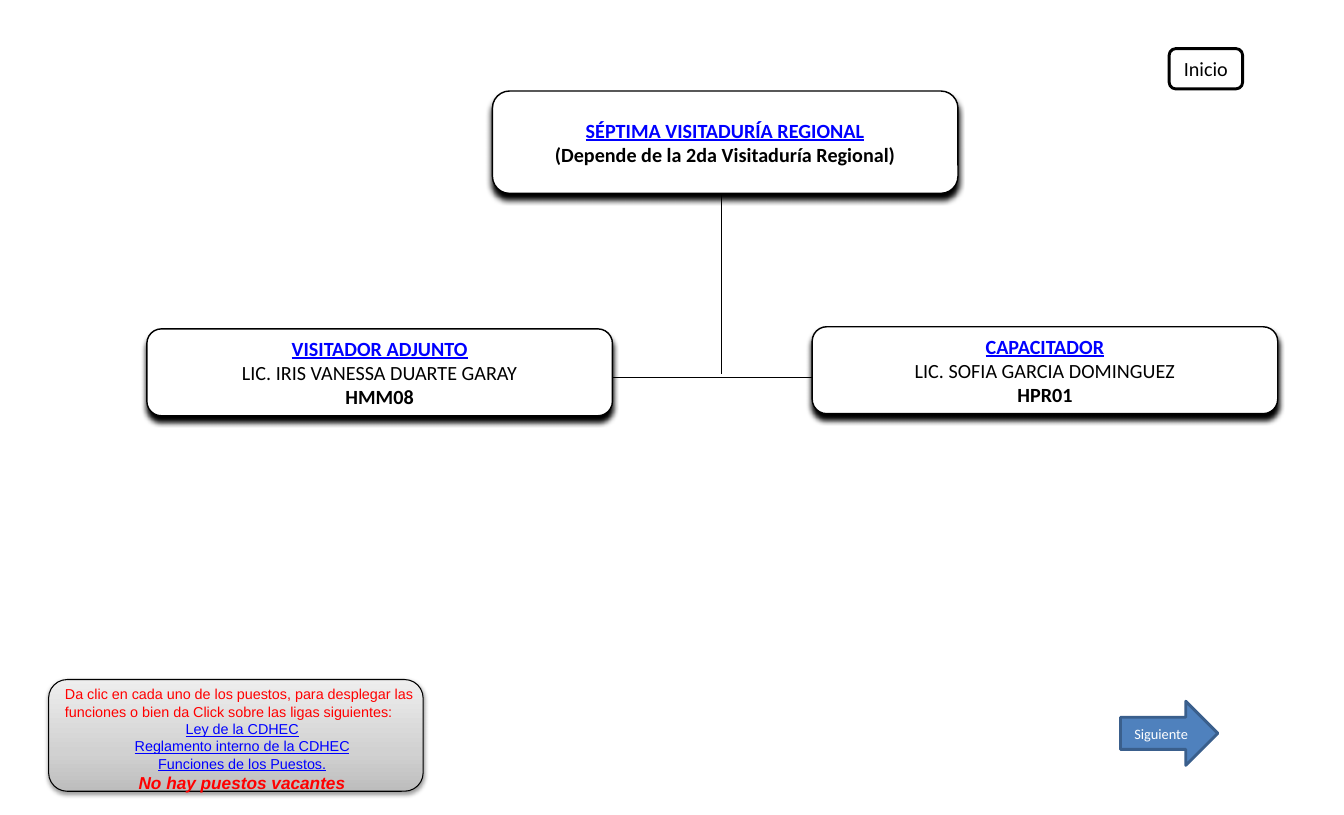
from copy import deepcopy
from pptx import Presentation, util as u
from pptx.dml.color import RGBColor
from pptx.enum import shapes, text
from pptx.oxml import parse_xml
from pptx.oxml.ns import nsdecls, qn

hues = {"ink": "000000", "paper": "FFFFFF", "link": "0000FF", "alert": "FF0000",
        "blue": "4F81BD", "navy": "3A5F8C",
        "dark": "BDBDBD", "mid": "D1D1D1", "light": "EEEEEE"}
rgb = {name: RGBColor.from_string(code) for name, code in hues.items()}
kinds = shapes.MSO_SHAPE

deck = Presentation()
deck.slide_width, deck.slide_height = u.Inches(12.99), u.Inches(7.88)
wide, high = deck.slide_width / 100, deck.slide_height / 100
slide = deck.slides.add_slide(deck.slide_layouts[6])


def draw(kind, x, y, w, h, fill, line, width, shade=None):
    form = slide.shapes.add_shape(kind, int(x * wide), int(y * high), int(w * wide), int(h * high))
    form.shadow.inherit = False
    form.fill.solid()
    form.fill.fore_color.rgb = rgb[fill]
    form.line.color.rgb = rgb[line]
    form.line.width = u.Pt(width)
    if shade:
        alpha, blur, drop = shade
        form._element.spPr.find(qn("a:effectLst")).append(parse_xml(
            f'<a:outerShdw {nsdecls("a")} blurRad="{u.Pt(blur)}" dist="{u.Pt(drop)}" '
            f'dir="5400000" rotWithShape="0"><a:srgbClr val="{hues["ink"]}">'
            f'<a:alpha val="{alpha * 1000}"/></a:srgbClr></a:outerShdw>'))
    return form


def write(frame, face, rows, align=text.PP_ALIGN.CENTER):
    for i, (words, size, hue, style) in enumerate(rows):
        para = frame.add_paragraph() if i else frame.paragraphs[0]
        para.text = words
        para.alignment = align
        font = para.font
        font.name, font.size = face, u.Pt(size)
        font.color.rgb = rgb[hue]
        font.bold, font.italic, font.underline = ("b" in style, "i" in style, "u" in style)


for x1, y1, x2, y2 in [(44.57, 46.32, 62.28, 46.32), (53.66, 23.98, 53.66, 45.94)]:
    link = slide.shapes.add_connector(shapes.MSO_CONNECTOR.STRAIGHT, int(x1 * wide),
                                      int(y1 * high), int(x2 * wide), int(y2 * high))
    link.line.color.rgb = rgb["ink"]
    link.line.width = u.Pt(0.75)
    link._element.spPr.append(parse_xml(f'<a:effectLst {nsdecls("a")}/>'))

posts = [
    (36.64, 11.17, 12.56, [("SÉPTIMA VISITADURÍA REGIONAL", "link", "bu"),
                           ("(Depende de la 2da Visitaduría Regional)", "ink", "b")]),
    (10.93, 40.36, 10.66, [("VISITADOR ADJUNTO", "link", "bu"),
                           ("LIC. IRIS VANESSA DUARTE GARAY", "ink", ""),
                           ("HMM08", "ink", "b")]),
    (60.43, 40.1, 10.66, [("CAPACITADOR", "link", "bu"),
                          ("LIC. SOFIA GARCIA DOMINGUEZ", "ink", ""),
                          ("HPR01", "ink", "b")]),
]
for x, y, tall, rows in posts:
    post = draw(kinds.ROUNDED_RECTANGLE, x, y, 34.64, tall, "paper", "ink", 1, (100, 4, 4))
    frame = post.text_frame
    frame.word_wrap = False
    frame.margin_left = frame.margin_right = u.Inches(0.17)
    frame.margin_top = frame.margin_bottom = u.Inches(0.09)
    write(frame, "Calibri", [(words, 14, hue, style) for words, hue, style in rows])

home = draw(kinds.ROUNDED_RECTANGLE, 86.99, 5.96, 5.47, 4.95, "paper", "ink", 2)
write(home.text_frame, "Calibri", [("Inicio", 14, "ink", "")])

panel = draw(kinds.ROUNDED_RECTANGLE, 3.62, 83.38, 27.87, 13.71, "light", "ink", 0.75,
             (38, 3.1, 1.6))
panel.fill.gradient()
panel.fill.gradient_angle = 90
stops = panel._element.spPr.find(".//" + qn("a:gsLst"))
stops.insert(1, deepcopy(stops[0]))
for stop, (place, hue) in zip(panel.fill.gradient_stops,
                              [(0, "dark"), (0.35, "mid"), (1, "light")]):
    stop.position = place
    stop.color.rgb = rgb[hue]

note = slide.shapes.add_textbox(int(4.08 * wide), int(83.5 * high),
                                int(27.87 * wide), int(14.47 * high))
note.text_frame.word_wrap = True
write(note.text_frame, "Arial", [
    ("Da clic en cada uno de los puestos, para desplegar las funciones "
     "o bien da Click sobre las ligas siguientes:", 10, "alert", ""),
    ("Ley de la CDHEC", 10, "link", "u"),
    ("Reglamento interno de la CDHEC", 10, "link", "u"),
    ("Funciones de los Puestos.", 10, "link", "u"),
    ("No hay puestos vacantes", 12, "alert", "bi"),
])
note.text_frame.paragraphs[0].alignment = text.PP_ALIGN.LEFT

arrow = draw(kinds.RIGHT_ARROW, 83.37, 86.04, 7.24, 7.87, "blue", "navy", 2)
write(arrow.text_frame, "Calibri", [("Siguiente", 10, "paper", "")])

deck.save("out.pptx")
